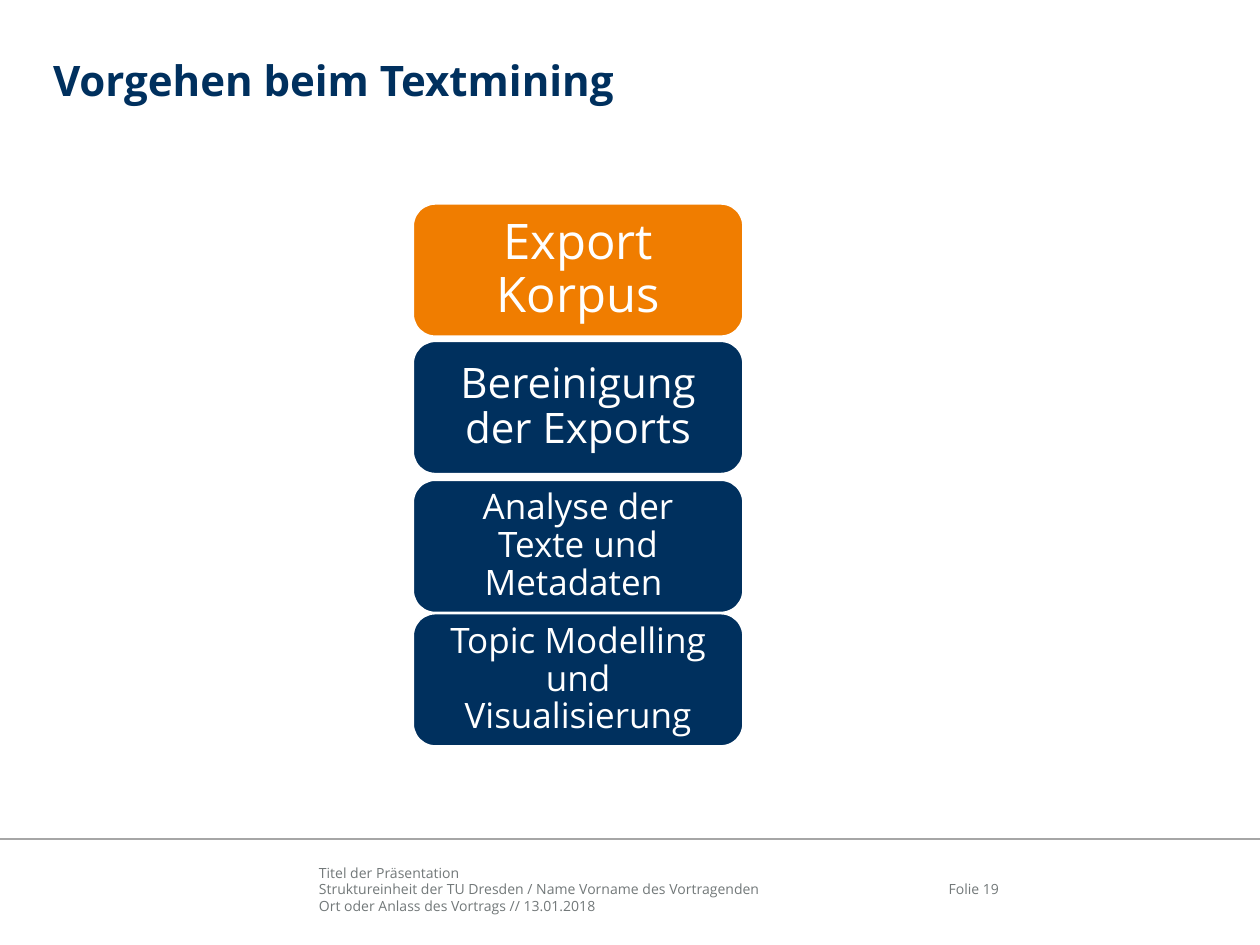
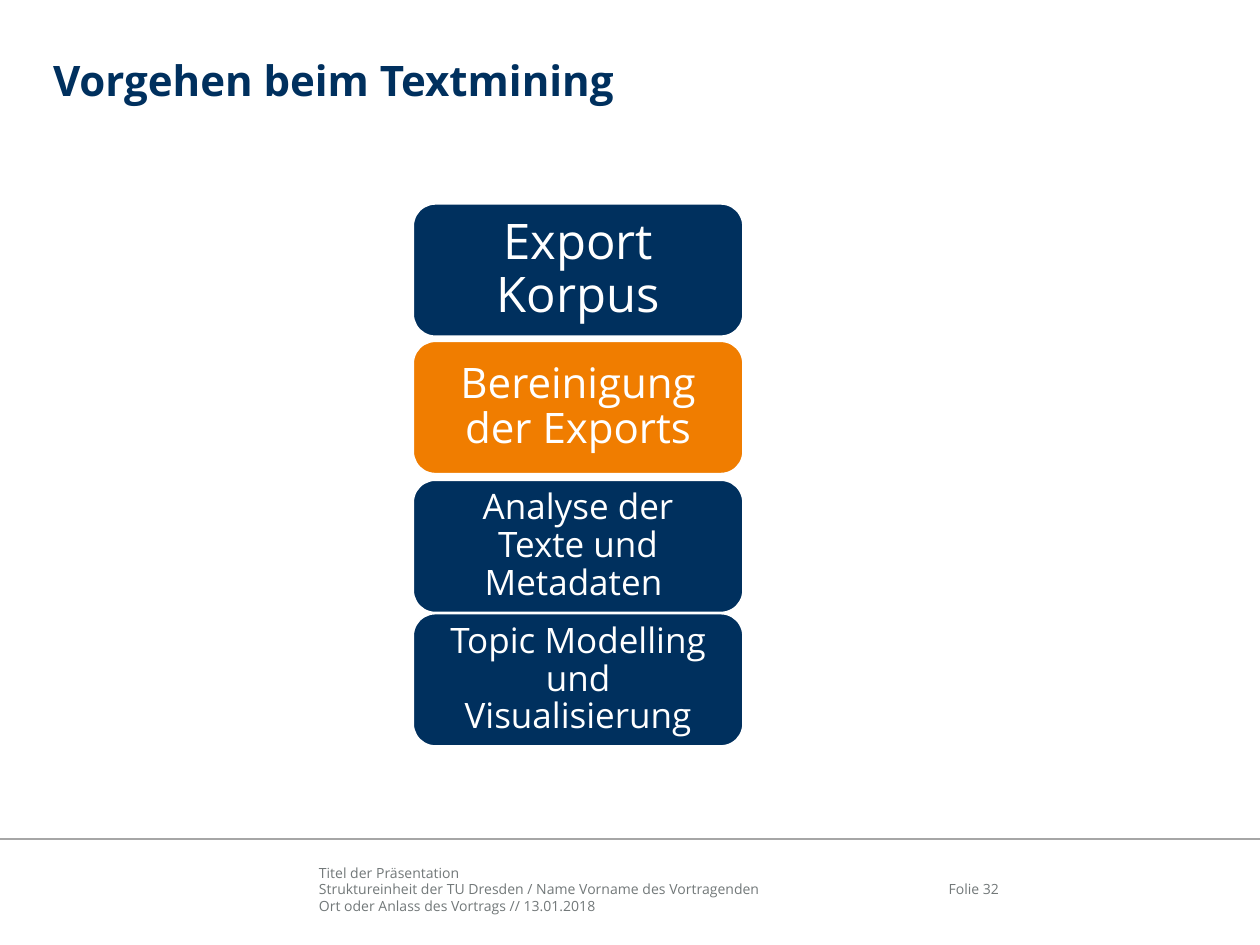
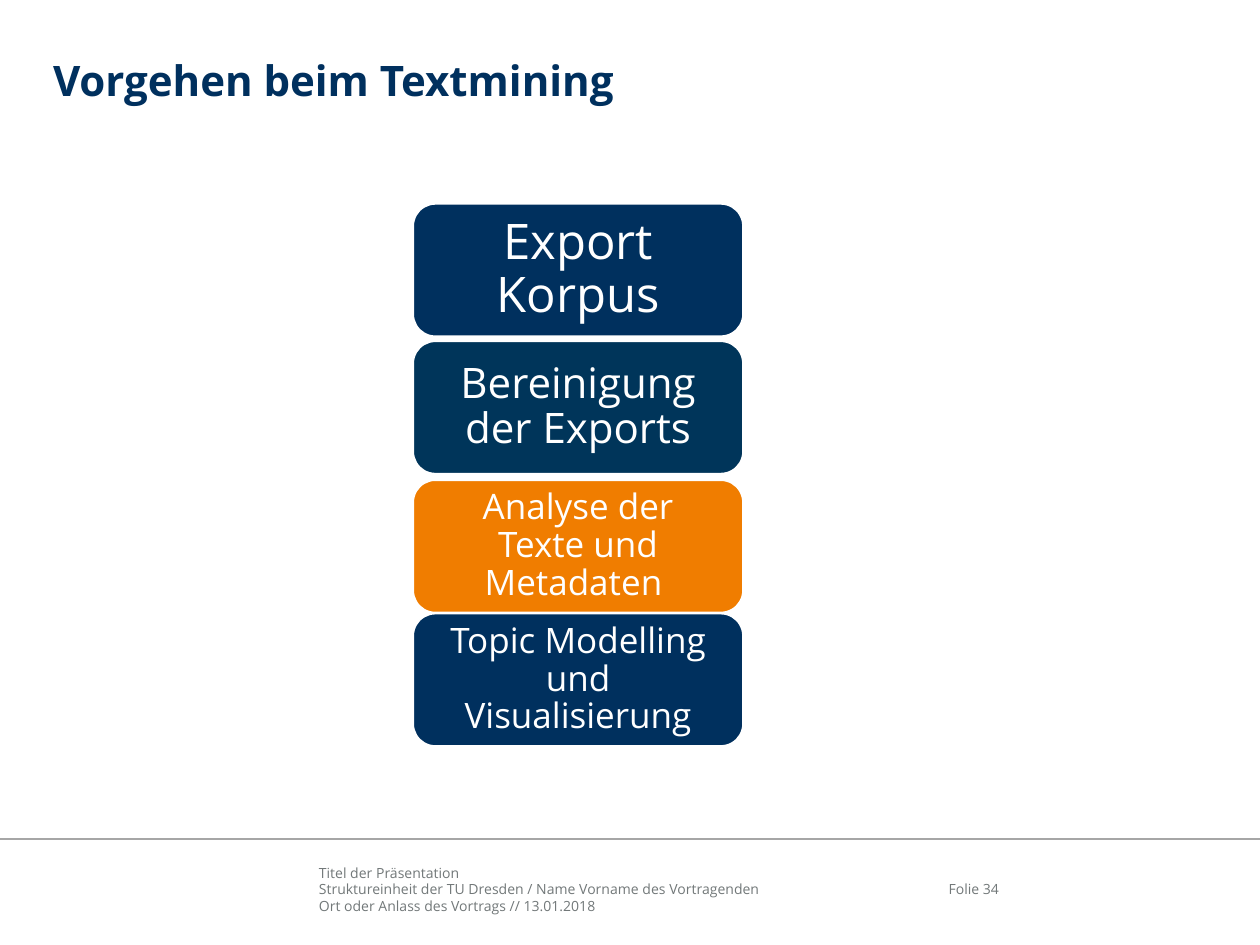
from lxml import etree
from pptx import Presentation
from pptx.dml.color import RGBColor
from pptx.enum.shapes import MSO_CONNECTOR, MSO_SHAPE
from pptx.enum.text import MSO_ANCHOR, PP_ALIGN
from pptx.oxml.ns import qn
from pptx.util import Cm, Pt

STRAIGHT = MSO_CONNECTOR.STRAIGHT
ROUNDED = MSO_SHAPE.ROUNDED_RECTANGLE
TOP, MIDDLE = MSO_ANCHOR.TOP, MSO_ANCHOR.MIDDLE
LEFT, CENTER, RIGHT = PP_ALIGN.LEFT, PP_ALIGN.CENTER, PP_ALIGN.RIGHT

FONT = "Open Sans"
NAVY, PETROL, ORANGE = "00305E", "00355A", "F07D00"
WHITE, GRAY, RULE_GRAY = "FFFFFF", "727879", "A6A6A6"

TITLE = "Vorgehen beim Textmining"
FOOTER = [
    "Titel der Präsentation",
    "Struktureinheit der TU Dresden / Name Vorname des Vortragenden",
    "Ort oder Anlass des Vortrags // 13.01.2018",
]
STEPS = [
    ("Export Korpus", 28, 4.11),
    ("Bereinigung der Exports", 24, 6.88),
    ("Analyse der Texte und Metadaten ", 20, 9.68),
    ("Topic Modelling und Visualisierung", 20, 12.37),
]
SLIDES = [
    (19, [ORANGE, NAVY, NAVY, NAVY]),
    (32, [NAVY, ORANGE, NAVY, NAVY]),
    (34, [NAVY, PETROL, ORANGE, NAVY]),
]


def rgb(value):
    return RGBColor.from_string(value)


class Deck:
    """Presentation in the shared style, with the slide being filled."""

    def __init__(self):
        self.prs = Presentation()
        self.prs.slide_width, self.prs.slide_height = Cm(25.4), Cm(19.05)
        self.slide = None

    def add_slide(self, number):
        self.slide = self.prs.slides.add_slide(self.prs.slide_layouts[6])
        self.text([TITLE], (1.07, 1.09, 23.24, 2.26), 24, NAVY, bold=True)
        self.rule(16.92)
        self.text(FOOTER, (6.43, 17.42, 11.48, 1.02), 8, GRAY)
        self.text([f"Folie {number}"], (18.21, 17.42, 1.93, 1.02), 8, GRAY,
                  align=RIGHT, anchor=MIDDLE)

    def set_text(self, frame, lines, size, color, align, anchor, margins=(0, 0),
                 bold=False, spacing=None):
        frame.word_wrap = True
        frame.vertical_anchor = anchor
        frame.margin_left = frame.margin_right = Cm(margins[0])
        frame.margin_top = frame.margin_bottom = Cm(margins[1])
        frame.text = "\n".join(lines)
        for paragraph in frame.paragraphs:
            paragraph.alignment = align
            paragraph.line_spacing = spacing
            font = paragraph.font
            font.name, font.size, font.bold = FONT, Pt(size), bold
            font.color.rgb = rgb(color)

    def text(self, lines, place, size, color, align=LEFT, anchor=TOP, bold=False):
        box = self.slide.shapes.add_textbox(*map(Cm, place))
        self.set_text(box.text_frame, lines, size, color, align, anchor, bold=bold)

    def rule(self, top):
        rule = self.slide.shapes.add_connector(
            STRAIGHT, 0, Cm(top), self.prs.slide_width, Cm(top))
        rule.line.color.rgb = rgb(RULE_GRAY)
        rule.line.width = Pt(1)
        etree.SubElement(rule._element.spPr, qn("a:effectLst"))

    def step(self, label, size, top, fill):
        step = self.slide.shapes.add_shape(
            ROUNDED, Cm(8.33), Cm(top), Cm(6.65), Cm(2.67))
        step.shadow.inherit = False
        step.fill.solid()
        step.fill.fore_color.rgb = rgb(fill)
        step.line.color.rgb = rgb(WHITE)
        step.line.width = Pt(1)
        self.set_text(step.text_frame, [label], size, WHITE, CENTER, MIDDLE,
                      margins=(0.4, 0.18), spacing=0.9)


def main():
    deck = Deck()
    for number, fills in SLIDES:
        deck.add_slide(number)
        for (label, size, top), fill in zip(STEPS, fills):
            deck.step(label, size, top, fill)
    deck.prs.save("out.pptx")


if __name__ == "__main__":
    main()
